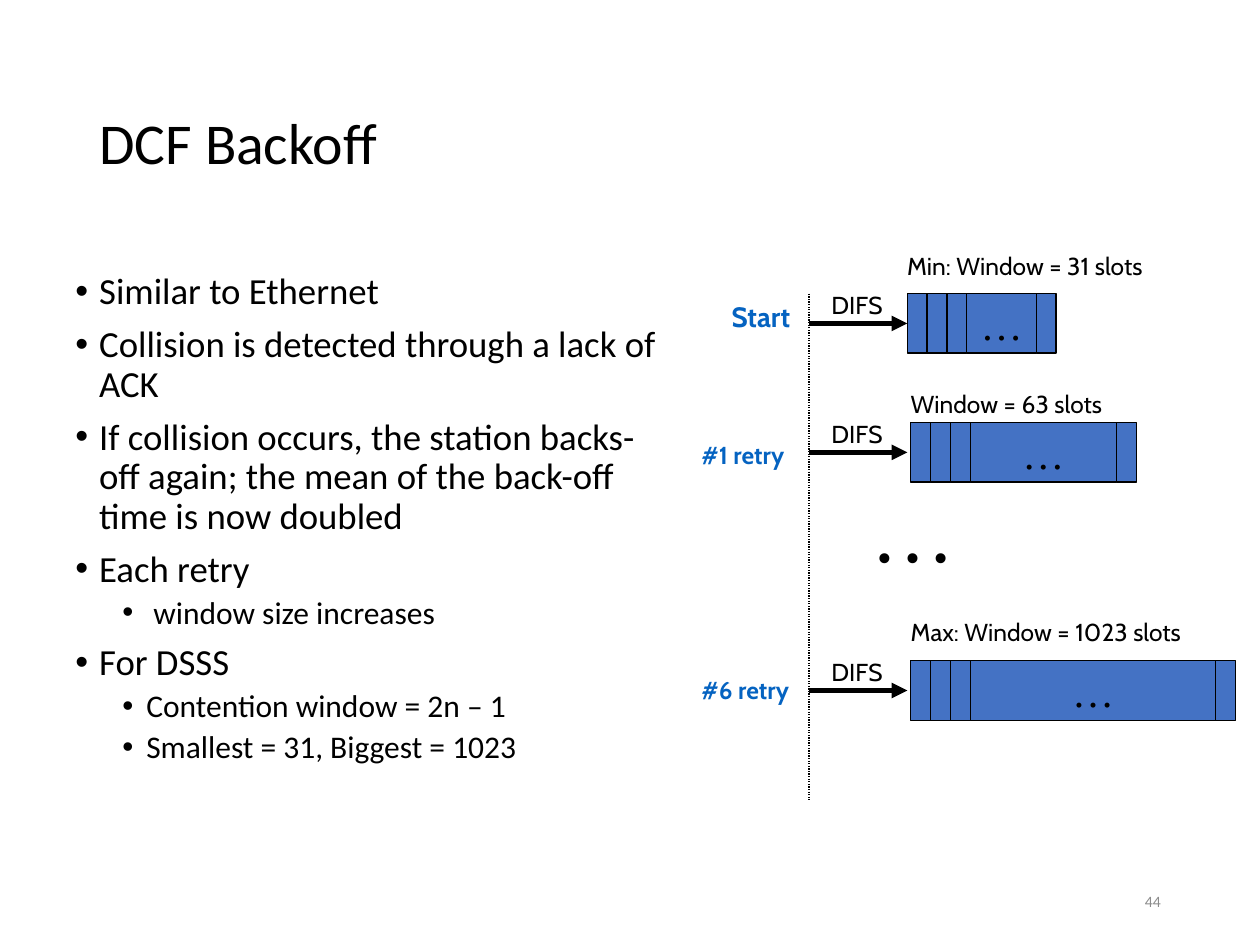
import pptx
import pptx.util
import pptx.dml.color
import pptx.enum.dml
import pptx.enum.shapes
import pptx.enum.text
import pptx.oxml.ns
import lxml.etree
from dataclasses import dataclass

Cm, Pt = pptx.util.Cm, pptx.util.Pt
ANCHOR = pptx.enum.text.MSO_ANCHOR
ALIGN = pptx.enum.text.PP_ALIGN


@dataclass(frozen=True)
class Theme:
    body_font: str = "Calibri"
    label_font: str = "Cabin"
    dots_font: str = "Times New Roman"
    ink: str = "000000"
    accent: str = "0563C1"
    slot: str = "4472C4"
    muted: str = "8C8C8C"
    title_size: float = 33
    start_size: float = 16
    label_size: float = 14
    slot_dots_size: float = 24
    gap_dots_size: float = 48
    number_size: float = 9
    thin: float = 0.75
    thick: float = 3


THEME = Theme()

TITLE = "DCF Backoff"
PAGE_NUMBER = "44"
POINTS = [
    (0, "Similar to Ethernet"),
    (0, "Collision is detected through a lack of ACK"),
    (0, "If collision occurs, the station backs-off again; "
        "the mean of the back-off time is now doubled"),
    (0, "Each retry"),
    (1, " window size increases"),
    (0, "For DSSS"),
    (1, "Contention window = 2n – 1"),
    (1, "Smallest = 31, Biggest = 1023"),
]
# Per level: type size (pt), space before (pt), text indent (cm)
LEVELS = [(21, 7.5, 0.48), (18, 3.8, 1.43)]
HANGING = 0.48

# Lengths in cm; arrow_y is the middle of the row of slots
ATTEMPTS = [
    dict(name="Start", name_box=(14.5, 5.92, 1.93, 0.94), name_size=THEME.start_size,
         window="Min: Window = 31 slots", window_top=4.93, window_width=5.69,
         arrow_y=6.52, slots_left=18.29, middle_width=1.4),
    dict(name="#1 retry", name_box=(13.89, 8.74, 2.59, 0.84), name_size=THEME.label_size,
         window="Window = 63 slots", window_top=7.72, window_width=4.6,
         arrow_y=9.12, slots_left=18.36, middle_width=2.95),
    dict(name="#6 retry", name_box=(13.89, 13.49, 2.59, 0.84), name_size=THEME.label_size,
         window="Max: Window = 1023 slots", window_top=12.32, window_width=6.35,
         arrow_y=13.92, slots_left=18.36, middle_width=4.95),
]
TIMELINE_X, TIMELINE_TOP, TIMELINE_BOTTOM = 16.31, 5.92, 16.13
ARROW_END = 18.29
SLOT_WIDTH, SLOT_HEIGHT = 0.4, 1.2
LABEL_HEIGHT = 0.84


def rgb(value):
    return pptx.dml.color.RGBColor.from_string(value)


def style(paragraph, size, font, color=THEME.ink, bold=False):
    for run in paragraph.runs:
        run.font.size = Pt(size)
        run.font.name = font
        run.font.bold = bold
        run.font.color.rgb = rgb(color)


def add_text(slide, box, text, size, font, color=THEME.ink, bold=False,
             wrap=True, anchor=ANCHOR.TOP, align=ALIGN.LEFT):
    frame = slide.shapes.add_textbox(*map(Cm, box)).text_frame
    frame.text = text
    frame.word_wrap = wrap
    frame.vertical_anchor = anchor
    frame.paragraphs[0].alignment = align
    style(frame.paragraphs[0], size, font, color, bold)
    return frame


def add_label(slide, box, text, size=THEME.label_size, color=THEME.ink, bold=False):
    frame = add_text(slide, box, text, size, THEME.label_font, color, bold, wrap=False)
    frame.auto_size = pptx.enum.text.MSO_AUTO_SIZE.SHAPE_TO_FIT_TEXT


def add_line(slide, start, end, width):
    line = slide.shapes.add_connector(
        pptx.enum.shapes.MSO_CONNECTOR.STRAIGHT, *map(Cm, start + end))
    line.line.color.rgb = rgb(THEME.ink)
    line.line.width = Pt(width)
    lxml.etree.SubElement(line._element.spPr, pptx.oxml.ns.qn("a:effectLst"))
    return line


def add_slot(slide, left, top, width):
    slot = slide.shapes.add_shape(
        pptx.enum.shapes.MSO_SHAPE.RECTANGLE, *map(Cm, (left, top, width, SLOT_HEIGHT)))
    slot.shadow.inherit = False
    slot.fill.solid()
    slot.fill.fore_color.rgb = rgb(THEME.slot)
    slot.line.color.rgb = rgb(THEME.ink)
    slot.line.width = Pt(THEME.thin)
    return slot


def add_points(slide):
    frame = slide.shapes.add_textbox(*map(Cm, (1.27, 5.38, 12.22, 12.19))).text_frame
    frame.word_wrap = True
    for index, (level, text) in enumerate(POINTS):
        size, space_before, indent = LEVELS[level]
        point = frame.add_paragraph() if index else frame.paragraphs[0]
        point.text = text
        point.level = level
        point.line_spacing = 0.9
        if index:
            point.space_before = Pt(space_before)
        properties = point._p.get_or_add_pPr()
        properties.set("marL", str(Cm(indent)))
        properties.set("indent", str(-Cm(HANGING)))
        bullet_font = lxml.etree.SubElement(properties, pptx.oxml.ns.qn("a:buFont"))
        bullet_font.set("typeface", "Arial")
        lxml.etree.SubElement(properties, pptx.oxml.ns.qn("a:buChar")).set("char", "•")
        style(point, size, THEME.body_font)


def add_attempt(slide, attempt):
    """Draw one attempt: its name, the DIFS arrow and the contention window."""
    y, left, middle_width = attempt["arrow_y"], attempt["slots_left"], attempt["middle_width"]
    arrow = add_line(slide, (TIMELINE_X, y), (ARROW_END, y), THEME.thick)
    lxml.etree.SubElement(
        arrow.line._get_or_add_ln(), pptx.oxml.ns.qn("a:tailEnd")).set("type", "triangle")
    add_label(slide, (16.51, y - 0.79, 1.55, LABEL_HEIGHT), "DIFS")

    slot_left = left
    slots = []
    for width in [SLOT_WIDTH] * 3 + [middle_width, SLOT_WIDTH]:
        slots.append(add_slot(slide, slot_left, y - SLOT_HEIGHT / 2, width))
        slot_left += width
    if left == ARROW_END:
        arrow.end_connect(slots[0], 1)

    dots = slots[3].text_frame
    dots.text = "…"
    dots.word_wrap = False
    dots.vertical_anchor = ANCHOR.MIDDLE
    dots.paragraphs[0].alignment = ALIGN.CENTER
    style(dots.paragraphs[0], THEME.slot_dots_size, THEME.dots_font)

    add_label(slide, (left - 0.25, attempt["window_top"], attempt["window_width"],
                      LABEL_HEIGHT), attempt["window"])
    add_label(slide, attempt["name_box"], attempt["name"], attempt["name_size"],
              THEME.accent, bold=True)


def main():
    deck = pptx.Presentation()
    deck.slide_width, deck.slide_height = Cm(25.4), Cm(19.05)
    slide = deck.slides.add_slide(deck.slide_layouts[6])

    add_text(slide, (1.75, 1.02, 21.9, 3.68), TITLE, THEME.title_size,
             THEME.body_font, anchor=ANCHOR.MIDDLE)
    add_points(slide)

    timeline = add_line(slide, (TIMELINE_X, TIMELINE_TOP), (TIMELINE_X, TIMELINE_BOTTOM),
                        THEME.thin)
    timeline.line.dash_style = pptx.enum.dml.MSO_LINE.ROUND_DOT
    for attempt in ATTEMPTS:
        add_attempt(slide, attempt)
    add_text(slide, (17.3, 9.53, 2.46, 2.29), "…", THEME.gap_dots_size, THEME.dots_font)

    add_text(slide, (17.93, 17.65, 5.72, 1.02), PAGE_NUMBER, THEME.number_size,
             THEME.body_font, THEME.muted, anchor=ANCHOR.MIDDLE, align=ALIGN.RIGHT)
    deck.save("out.pptx")


if __name__ == "__main__":
    main()
